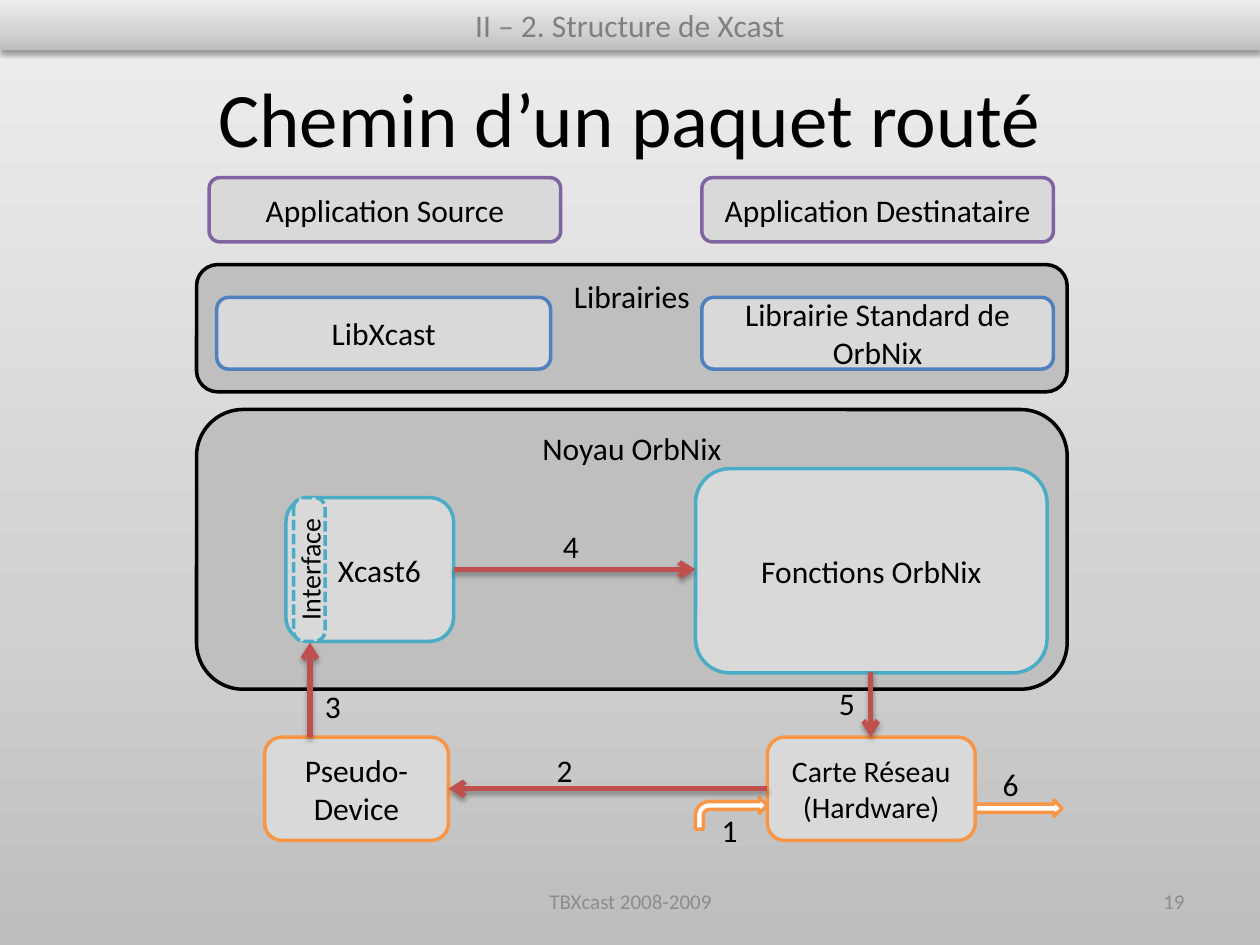
from copy import deepcopy
from pptx import Presentation
from pptx.dml.color import RGBColor
from pptx.enum.dml import MSO_LINE_DASH_STYLE as DASH
from pptx.enum.shapes import MSO_CONNECTOR, MSO_SHAPE as SHAPE
from pptx.enum.text import MSO_ANCHOR as ANCHOR, PP_ALIGN as ALIGN
from pptx.oxml import parse_xml
from pptx.oxml.ns import nsdecls, qn
from pptx.util import Inches, Pt

THEME = {
    "font": "Calibri",
    "title": 44, "body": 18, "card": 17, "interface": 16, "footer": 12,
    "text": "000000", "header": "808080", "muted": "8C8C8C",
    "group": "BFBFBF", "box": "D9D9D9", "white": "FFFFFF",
    "black": "000000", "purple": "8064A2", "blue": "4F81BD",
    "teal": "4BACC6", "orange": "F79646", "red": "C0504D",
    "gradient": [(0, "BDBDBD"), (0.35, "D1D1D1"), (1, "EEEEEE")],
    "outline": 2, "arrow": 3,
}

HEADER = "II – 2. Structure de Xcast"
TITLE = "Chemin d’un paquet routé"
FOOTER, PAGE = "TBXcast 2008-2009", "19"

GROUPS = [
    ("Librairies", 2.1, 1.01),
    ("Noyau OrbNix", 3.25, 2.22),
]
BOXES = [
    ("Application Source", (1.66, 1.41, 2.79, 0.51), "purple", {}),
    ("Application Destinataire", (5.57, 1.41, 2.79, 0.51), "purple", {}),
    ("LibXcast", (1.72, 2.36, 2.65, 0.57), "blue", {}),
    ("Librairie Standard de OrbNix", (5.57, 2.36, 2.79, 0.57), "blue", {}),
    ("Xcast6", (2.27, 3.95, 1.33, 1.14), "teal", {"left": 0.25}),
    ("Fonctions OrbNix", (5.52, 3.72, 2.79, 1.62), "teal", {}),
    ("Pseudo-Device", (2.1, 5.85, 1.46, 0.82), "orange", {}),
    ("Carte Réseau\n(Hardware)", (6.09, 5.85, 1.65, 0.82), "orange", {"size": "card"}),
]
INTERFACE = ("Interface", (2.33, 3.95, 0.25, 1.14))
ARROWS = [
    ((6.09, 6.26), (3.56, 6.26)),
    ((2.46, 5.85), (2.46, 5.1)),
    ((3.6, 4.52), (5.52, 4.52)),
    ((6.91, 5.33), (6.91, 5.85)),
]
PACKETS = [
    (SHAPE.BENT_ARROW, (5.52, 6.33, 0.57, 0.25)),
    (SHAPE.RIGHT_ARROW, (7.42, 6.35, 1.01, 0.13)),
]
STEPS = [(5.63, 6.39), (4.32, 5.91), (2.48, 5.4), (4.37, 4.13), (6.56, 5.38), (7.86, 6.02)]


def color(name):
    return RGBColor.from_string(THEME[name])


def write(s, text, size="body", fill="text", align=ALIGN.CENTER, anchor=ANCHOR.MIDDLE,
          left=0.1, wrap=True):
    tf = s.text_frame
    tf.word_wrap = wrap
    tf.vertical_anchor = anchor
    tf.margin_left = Inches(left)
    for i, line in enumerate(text.split("\n")):
        p = tf.add_paragraph() if i else tf.paragraphs[0]
        p.alignment = align
        r = p.add_run()
        r.text = line
        r.font.name = THEME["font"]
        r.font.size = Pt(THEME[size])
        r.font.color.rgb = color(fill)


def add_label(slide, text, at, **fmt):
    write(slide.shapes.add_textbox(*map(Inches, at)), text, **fmt)


def add_block(slide, at, fill, line, kind=SHAPE.ROUNDED_RECTANGLE):
    s = slide.shapes.add_shape(kind, *map(Inches, at))
    s.shadow.inherit = False
    s.fill.solid()
    s.fill.fore_color.rgb = color(fill)
    s.line.color.rgb = color(line)
    s.line.width = Pt(THEME["outline"])
    return s


def apply_gradient(fill, element):
    fill.gradient()
    fill.gradient_angle = 90
    stops = element.find(".//" + qn("a:gsLst"))
    stops.insert(1, deepcopy(stops[0]))
    for stop, (position, rgb) in zip(fill.gradient_stops, THEME["gradient"]):
        stop.position = position
        stop.color.rgb = RGBColor.from_string(rgb)


def add_shadow(s):
    props = s._element.spPr
    for old in props.findall(qn("a:effectLst")):
        props.remove(old)
    props.append(parse_xml(
        f'<a:effectLst {nsdecls("a")}><a:outerShdw blurRad="{Pt(3.1)}" dist="{Pt(1.8)}" '
        'dir="5400000" rotWithShape="0"><a:srgbClr val="000000"><a:alpha val="35000"/>'
        '</a:srgbClr></a:outerShdw></a:effectLst>'))


def add_arrow(slide, start, end):
    s = slide.shapes.add_connector(MSO_CONNECTOR.STRAIGHT, *map(Inches, start + end))
    s.line.color.rgb = color("red")
    s.line.width = Pt(THEME["arrow"])
    s.line._get_or_add_ln().append(parse_xml(f'<a:tailEnd {nsdecls("a")} type="arrow"/>'))
    add_shadow(s)


def main():
    prs = Presentation()
    prs.slide_width, prs.slide_height = Inches(10), Inches(7.5)
    slide = prs.slides.add_slide(prs.slide_layouts[6])
    apply_gradient(slide.background.fill, slide._element)

    add_label(slide, TITLE, (0.5, 0.3, 9, 1.25), size="title")
    add_label(slide, FOOTER, (3.42, 6.95, 3.17, 0.4), size="footer", fill="muted")
    add_label(slide, PAGE, (7.17, 6.95, 2.33, 0.4), size="footer", fill="muted",
              align=ALIGN.RIGHT)

    for text, top, height in GROUPS:
        write(add_block(slide, (1.56, top, 6.91, height), "group", "black"), text,
              anchor=ANCHOR.TOP)
    for kind, at in PACKETS:
        add_block(slide, at, "white", "orange", kind)
    for text, at, line, fmt in BOXES:
        write(add_block(slide, at, "box", line), text, **fmt)

    text, at = INTERFACE
    s = add_block(slide, at, "box", "teal")
    s.adjustments[0] = 0.335
    s.line.dash_style = DASH.SQUARE_DOT
    write(s, text, size="interface")
    s.text_frame._txBody.bodyPr.set("vert", "vert270")

    for start, end in ARROWS:
        add_arrow(slide, start, end)
    for number, (x, y) in enumerate(STEPS, 1):
        add_label(slide, str(number), (x, y, 0.27, 0.33), align=ALIGN.LEFT,
                  anchor=ANCHOR.TOP, wrap=False)

    s = slide.shapes.add_shape(SHAPE.RECTANGLE, 0, 0, prs.slide_width, Inches(0.4))
    apply_gradient(s.fill, s._element)
    s.line.fill.background()
    add_shadow(s)
    write(s, HEADER, fill="header")

    prs.save("out.pptx")


if __name__ == "__main__":
    main()
